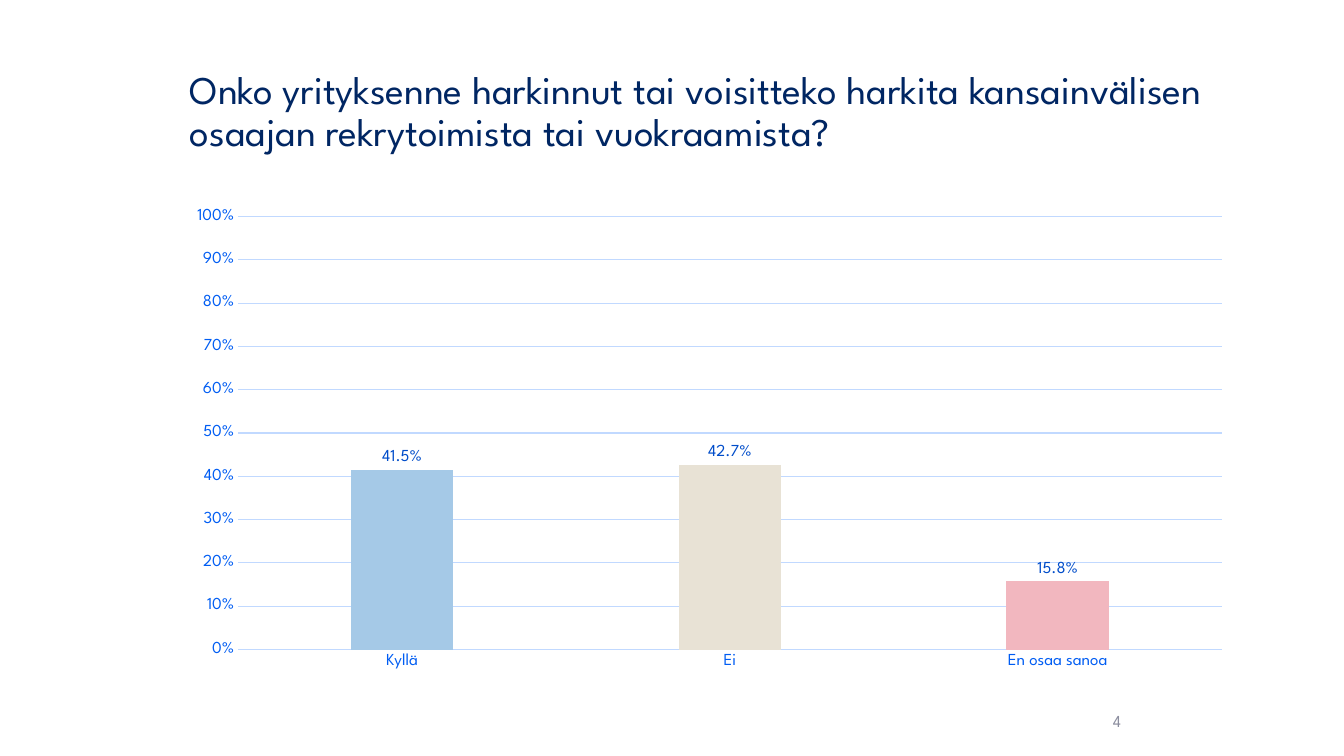
from pptx import Presentation
from pptx.chart.data import CategoryChartData
from pptx.dml.color import RGBColor
from pptx.enum.chart import XL_CHART_TYPE, XL_LABEL_POSITION, XL_TICK_MARK
from pptx.enum.text import MSO_ANCHOR, PP_ALIGN
from pptx.util import Emu, Pt

# Content
TITLE = ("Onko yrityksenne harkinnut tai voisitteko harkita kansainvälisen "
         "osaajan rekrytoimista tai vuokraamista?")
PAGE_NUMBER = "4"
ANSWERS = [  # answer, share, bar colour
    ("Kyllä", 0.415, "blue"),
    ("Ei", 0.427, "sand"),
    ("En osaa sanoa", 0.158, "pink"),
]

# Look
FONT = "League Spartan"
COLORS = {
    "navy": "002663", "gray": "8C8E9F", "axis": "005DF3", "label": "004DCA",
    "grid": "C1D9FF", "blue": "A5C9E7", "sand": "E8E2D5", "pink": "F2B7BF",
}

# Places in px: left, top, width, height
PAGE_SIZE = (1344, 756)
TITLE_BOX = (180, 40, 1103, 146)
NUMBER_BOX = (950, 701, 181, 40)
CHART_BOX = (176, 199, 1067, 480)


def px(*lengths):
    return [Emu(round(length * 12192000 / PAGE_SIZE[0])) for length in lengths]


def color(name):
    return RGBColor.from_string(COLORS[name])


def style_font(font, size, color_name):
    font.name = FONT
    font.size = Pt(size)
    font.bold = False
    font.color.rgb = color(color_name)


def style_line(line, color_name):
    line.color.rgb = color(color_name)
    line.width = Pt(0.75)


def add_text(page, place, text, size, color_name, align=PP_ALIGN.LEFT, spacing=1.0):
    box = page.shapes.add_textbox(*px(*place))
    frame = box.text_frame
    frame.word_wrap = True
    frame.vertical_anchor = MSO_ANCHOR.MIDDLE
    para = frame.paragraphs[0]
    para.alignment = align
    para.line_spacing = spacing
    span = para.add_run()
    span.text = text
    style_font(span.font, size, color_name)


def add_answer_chart(page):
    data = CategoryChartData(number_format="0.0%")
    data.categories = [answer for answer, _, _ in ANSWERS]
    data.add_series("Series 1", [share for _, share, _ in ANSWERS])
    chart = page.shapes.add_chart(
        XL_CHART_TYPE.COLUMN_CLUSTERED, *px(*CHART_BOX), data).chart
    chart.has_title = False
    chart.has_legend = False
    style_font(chart.font, 10, "navy")

    # Axes
    for axis in (chart.category_axis, chart.value_axis):
        axis.major_tick_mark = axis.minor_tick_mark = XL_TICK_MARK.NONE
        style_font(axis.tick_labels.font, 12, "axis")
    style_line(chart.category_axis.format.line, "grid")
    shares = chart.value_axis
    shares.minimum_scale, shares.maximum_scale, shares.major_unit = 0, 1, 0.1
    shares.tick_labels.number_format = "0%"
    shares.tick_labels.number_format_is_linked = False
    shares.format.line.fill.background()
    shares.has_major_gridlines = True
    style_line(shares.major_gridlines.format.line, "grid")

    # Bars and their labels
    plot = chart.plots[0]
    plot.gap_width, plot.overlap = 219, -27
    plot.vary_by_categories = False
    series = plot.series[0]
    for index, (_, _, color_name) in enumerate(ANSWERS):
        fill = series.points[index].format.fill
        fill.solid()
        fill.fore_color.rgb = color(color_name)
    labels = series.data_labels
    labels.show_value = True
    labels.number_format = "0.0%"
    labels.number_format_is_linked = False
    labels.position = XL_LABEL_POSITION.OUTSIDE_END
    style_font(labels.font, 12, "label")


def main():
    deck = Presentation()
    deck.slide_width, deck.slide_height = px(*PAGE_SIZE)
    page = deck.slides.add_slide(deck.slide_layouts[6])
    add_text(page, TITLE_BOX, TITLE, 28, "navy", spacing=0.9)
    add_text(page, NUMBER_BOX, PAGE_NUMBER, 12, "gray", align=PP_ALIGN.RIGHT)
    add_answer_chart(page)
    deck.save("out.pptx")


if __name__ == "__main__":
    main()
